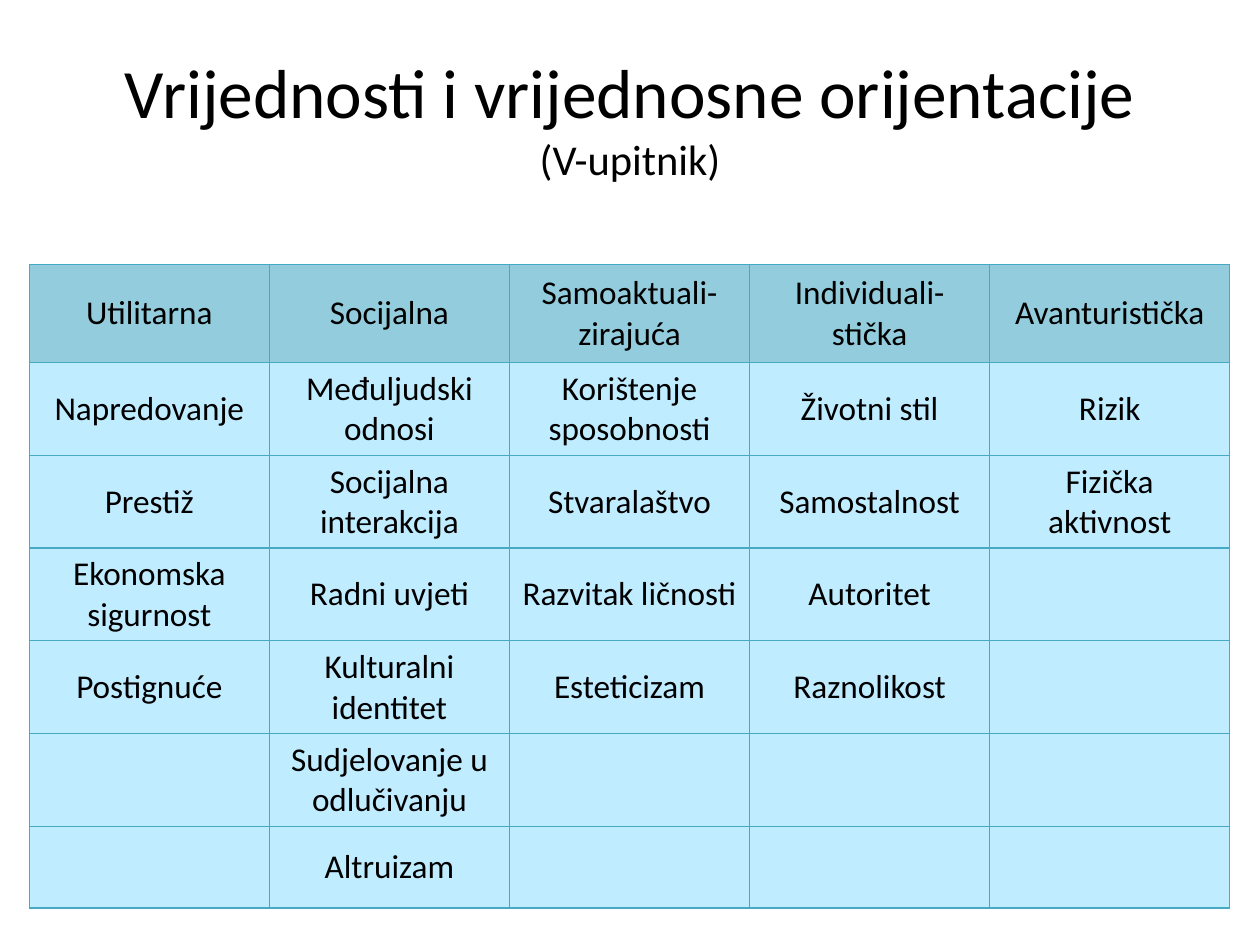
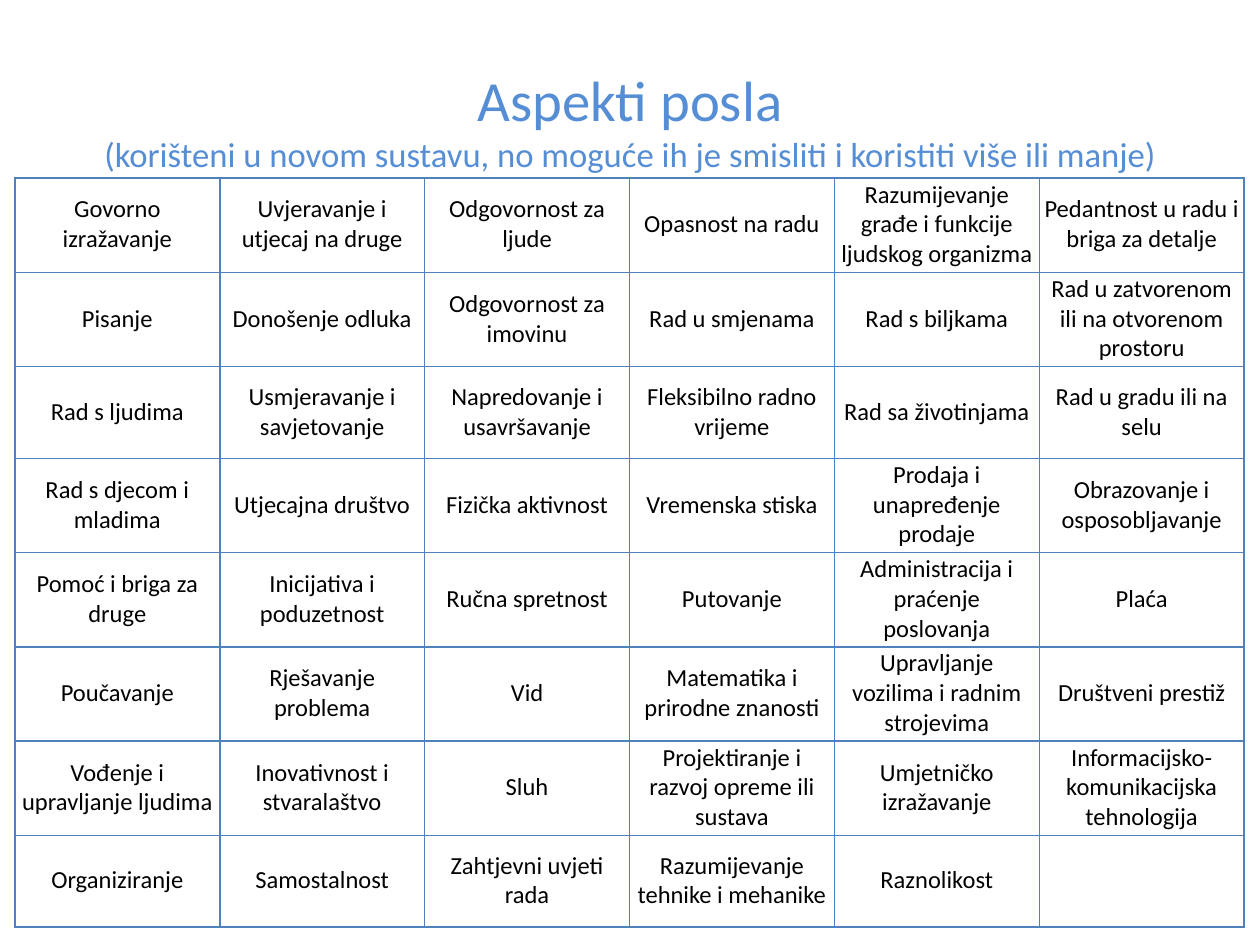
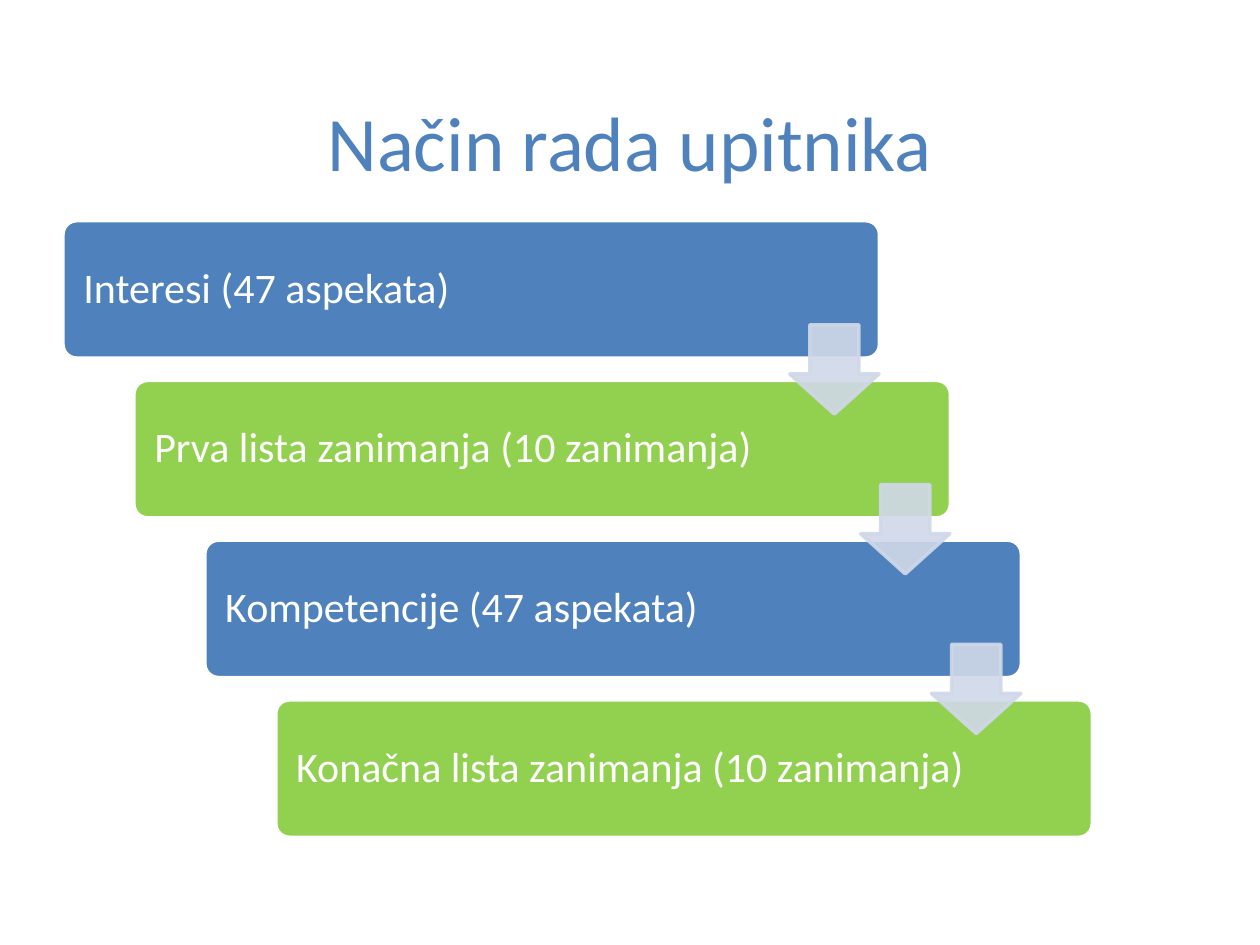
"""Build three slides on work values, job aspects and how the questionnaire works."""
from dataclasses import dataclass

import lxml.etree
import pptx
import pptx.dml.color
import pptx.enum.shapes
import pptx.enum.text
import pptx.oxml.ns
import pptx.presentation
import pptx.shapes.autoshape
import pptx.slide
import pptx.table
import pptx.text.text
import pptx.util

Cm = pptx.util.Cm
Pt = pptx.util.Pt
qn = pptx.oxml.ns.qn


@dataclass(frozen=True)
class Theme:
    font: str = "Calibri"
    black: str = "000000"
    white: str = "FFFFFF"
    blue: str = "4F81BD"
    light_blue: str = "558ED5"
    green: str = "92D050"
    arrow: str = "D0D8E8"
    values_header: str = "93CDDD"
    values_body: str = "C0ECFF"
    values_border: str = "46AAC5"
    values_size: float = 19
    aspects_size: float = 14
    step_size: float = 24
    outline: float = 2


THEME = Theme()


@dataclass(frozen=True)
class Title:
    lines: tuple[tuple[str, float], ...]
    color: str
    top: float
    height: float


@dataclass(frozen=True)
class Grid:
    rows: tuple[tuple[str, ...], ...]
    left: float
    top: float
    column_width: float
    row_heights: tuple[float, ...]
    size: float
    header_fill: str
    body_fill: str
    border: str
    border_width: float
    margins: tuple[float, float, float, float]


@dataclass(frozen=True)
class Step:
    text: str
    fill: str


VALUES_TITLE = Title(
    (("Vrijednosti i vrijednosne orijentacije", 39.6), ("(V-upitnik)", 24.3)),
    THEME.black, 0.76, 3.18,
)
ASPECTS_TITLE = Title(
    (
        ("Aspekti posla", 32.4),
        ("(korišteni u novom sustavu, no moguće ih je smisliti i koristiti više ili manje)", 19.8),
    ),
    THEME.light_blue, 1.52, 1.8,
)
PROCESS_TITLE = Title((("Način rada upitnika", 44),), THEME.blue, 1.73, 2.2)

VALUES = Grid(
    rows=(
        ("Utilitarna", "Socijalna", "Samoaktuali-zirajuća", "Individuali-stička", "Avanturistička"),
        ("Napredovanje", "Međuljudski odnosi", "Korištenje sposobnosti", "Životni stil", "Rizik"),
        ("Prestiž", "Socijalna interakcija", "Stvaralaštvo", "Samostalnost", "Fizička aktivnost"),
        ("Ekonomska sigurnost", "Radni uvjeti", "Razvitak ličnosti", "Autoritet", ""),
        ("Postignuće", "Kulturalni identitet", "Esteticizam", "Raznolikost", ""),
        ("", "Sudjelovanje u odlučivanju", "", "", ""),
        ("", "Altruizam", "", "", ""),
    ),
    left=0.59, top=5.33, column_width=4.84, row_heights=(1.98,) + (1.65,) * 6,
    size=THEME.values_size, header_fill=THEME.values_header, body_fill=THEME.values_body,
    border=THEME.values_border, border_width=0.75, margins=(0.25, 0.13, 0.25, 0.13),
)
ASPECTS = Grid(
    rows=(
        ("Govorno izražavanje", "Uvjeravanje i utjecaj na druge", "Odgovornost za ljude",
         "Opasnost na radu", "Razumijevanje građe i funkcije ljudskog organizma",
         "Pedantnost u radu i briga za detalje"),
        ("Pisanje", "Donošenje odluka", "Odgovornost za imovinu", "Rad u smjenama",
         "Rad s biljkama", "Rad u zatvorenom ili na otvorenom prostoru"),
        ("Rad s ljudima", "Usmjeravanje i savjetovanje", "Napredovanje i usavršavanje",
         "Fleksibilno radno vrijeme", "Rad sa životinjama", "Rad u gradu ili na selu"),
        ("Rad s djecom i mladima", "Utjecajna društvo", "Fizička aktivnost",
         "Vremenska stiska", "Prodaja i unapređenje prodaje", "Obrazovanje i osposobljavanje"),
        ("Pomoć i briga za druge", "Inicijativa i poduzetnost", "Ručna spretnost", "Putovanje",
         "Administracija i praćenje poslovanja", "Plaća"),
        ("Poučavanje", "Rješavanje problema", "Vid", "Matematika i prirodne znanosti",
         "Upravljanje vozilima i radnim strojevima", "Društveni prestiž"),
        ("Vođenje i upravljanje ljudima", "Inovativnost i stvaralaštvo", "Sluh",
         "Projektiranje i razvoj opreme ili sustava", "Umjetničko izražavanje",
         "Informacijsko- komunikacijska tehnologija"),
        ("Organiziranje", "Samostalnost", "Zahtjevni uvjeti rada",
         "Razumijevanje tehnike i mehanike", "Raznolikost", ""),
    ),
    left=0.3, top=3.59, column_width=4.13,
    row_heights=(1.9, 1.9, 1.85, 1.9, 1.9, 1.9, 1.9, 1.85),
    size=THEME.aspects_size, header_fill=THEME.white, body_fill=THEME.white,
    border=THEME.blue, border_width=1, margins=(0.07, 0.02, 0.07, 0.05),
)
STEPS = (
    Step("Interesi (47 aspekata)", THEME.blue),
    Step("Prva lista zanimanja (10 zanimanja)", THEME.green),
    Step("Kompetencije (47 aspekata)", THEME.blue),
    Step("Konačna lista zanimanja (10 zanimanja)", THEME.green),
)


def rgb(color: str) -> pptx.dml.color.RGBColor:
    return pptx.dml.color.RGBColor.from_string(color)


def style_run(run: pptx.text.text._Run, size: float, color: str) -> None:
    run.font.name = THEME.font
    run.font.size = Pt(size)
    run.font.color.rgb = rgb(color)


def add_title(slide: pptx.slide.Slide, title: Title) -> None:
    shape = slide.shapes.add_textbox(Cm(1.27), Cm(title.top), Cm(22.86), Cm(title.height))
    text_frame = shape.text_frame
    text_frame.word_wrap = True
    text_frame.vertical_anchor = pptx.enum.text.MSO_ANCHOR.MIDDLE
    paragraph = text_frame.paragraphs[0]
    paragraph.text = "\v".join(text for text, _ in title.lines)
    paragraph.alignment = pptx.enum.text.PP_ALIGN.CENTER
    for run, (_, size) in zip(paragraph.runs, title.lines):
        style_run(run, size, title.color)


def add_borders(cell: pptx.table._Cell, color: str, width: float) -> None:
    properties = cell._tc.get_or_add_tcPr()
    for index, side in enumerate(("a:lnL", "a:lnR", "a:lnT", "a:lnB")):
        line = lxml.etree.Element(qn(side), w=str(Pt(width)))
        fill = lxml.etree.SubElement(line, qn("a:solidFill"))
        lxml.etree.SubElement(fill, qn("a:srgbClr"), val=color)
        properties.insert(index, line)


def fill_cell(cell: pptx.table._Cell, text: str, fill: str, grid: Grid) -> None:
    cell.fill.solid()
    cell.fill.fore_color.rgb = rgb(fill)
    add_borders(cell, grid.border, grid.border_width)
    cell.margin_left, cell.margin_top, cell.margin_right, cell.margin_bottom = map(Cm, grid.margins)
    cell.vertical_anchor = pptx.enum.text.MSO_ANCHOR.MIDDLE
    paragraph = cell.text_frame.paragraphs[0]
    paragraph.alignment = pptx.enum.text.PP_ALIGN.CENTER
    if text:
        paragraph.text = text
        style_run(paragraph.runs[0], grid.size, THEME.black)


def add_grid(slide: pptx.slide.Slide, grid: Grid) -> None:
    column_count = len(grid.rows[0])
    table = slide.shapes.add_table(
        len(grid.rows), column_count, Cm(grid.left), Cm(grid.top),
        Cm(grid.column_width * column_count), Cm(sum(grid.row_heights)),
    ).table
    table.first_row = False
    table.horz_banding = False
    for column in table.columns:
        column.width = Cm(grid.column_width)
    for row_index, texts in enumerate(grid.rows):
        table.rows[row_index].height = Cm(grid.row_heights[row_index])
        fill = grid.body_fill if row_index else grid.header_fill
        for column_index, text in enumerate(texts):
            fill_cell(table.cell(row_index, column_index), text, fill, grid)


def paint(shape: pptx.shapes.autoshape.Shape, fill: str, line: str) -> None:
    shape.shadow.inherit = False
    shape.fill.solid()
    shape.fill.fore_color.rgb = rgb(fill)
    shape.line.color.rgb = rgb(line)
    shape.line.width = Pt(THEME.outline)


def add_step(slide: pptx.slide.Slide, step: Step, left: float, top: float) -> None:
    shape = slide.shapes.add_shape(
        pptx.enum.shapes.MSO_SHAPE.ROUNDED_RECTANGLE, Cm(left), Cm(top), Cm(16.46), Cm(2.77)
    )
    shape.adjustments[0] = 0.1
    paint(shape, step.fill, THEME.white)
    text_frame = shape.text_frame
    text_frame.word_wrap = True
    text_frame.margin_left = Cm(0.33)
    text_frame.vertical_anchor = pptx.enum.text.MSO_ANCHOR.MIDDLE
    paragraph = text_frame.paragraphs[0]
    paragraph.text = step.text
    paragraph.alignment = pptx.enum.text.PP_ALIGN.LEFT
    paragraph.line_spacing = 0.9
    style_run(paragraph.runs[0], THEME.step_size, THEME.white)


def add_arrow(slide: pptx.slide.Slide, left: float, top: float) -> None:
    shape = slide.shapes.add_shape(
        pptx.enum.shapes.MSO_SHAPE.DOWN_ARROW, Cm(left), Cm(top), Cm(1.8), Cm(1.8)
    )
    shape.adjustments[0] = 0.55
    shape.adjustments[1] = 0.45
    paint(shape, THEME.arrow, THEME.arrow)
    for color in shape._element.spPr.iter(qn("a:srgbClr")):
        lxml.etree.SubElement(color, qn("a:alpha"), val="90000")


def add_staircase(slide: pptx.slide.Slide, steps: tuple[Step, ...]) -> None:
    corners = [(1.27 + 1.43 * index, 4.45 + 3.22 * index) for index in range(len(steps))]
    for step, (left, top) in zip(steps, corners):
        add_step(slide, step, left, top)
    for left, top in corners[:-1]:
        add_arrow(slide, left + 14.65, top + 2.1)


def add_titled_slide(presentation: pptx.presentation.Presentation, title: Title) -> pptx.slide.Slide:
    slide = presentation.slides.add_slide(presentation.slide_layouts[6])
    add_title(slide, title)
    return slide


def main() -> None:
    presentation = pptx.Presentation()
    presentation.slide_width = Cm(25.4)
    presentation.slide_height = Cm(19.05)
    add_grid(add_titled_slide(presentation, VALUES_TITLE), VALUES)
    add_grid(add_titled_slide(presentation, ASPECTS_TITLE), ASPECTS)
    add_staircase(add_titled_slide(presentation, PROCESS_TITLE), STEPS)
    presentation.save("out.pptx")


if __name__ == "__main__":
    main()
